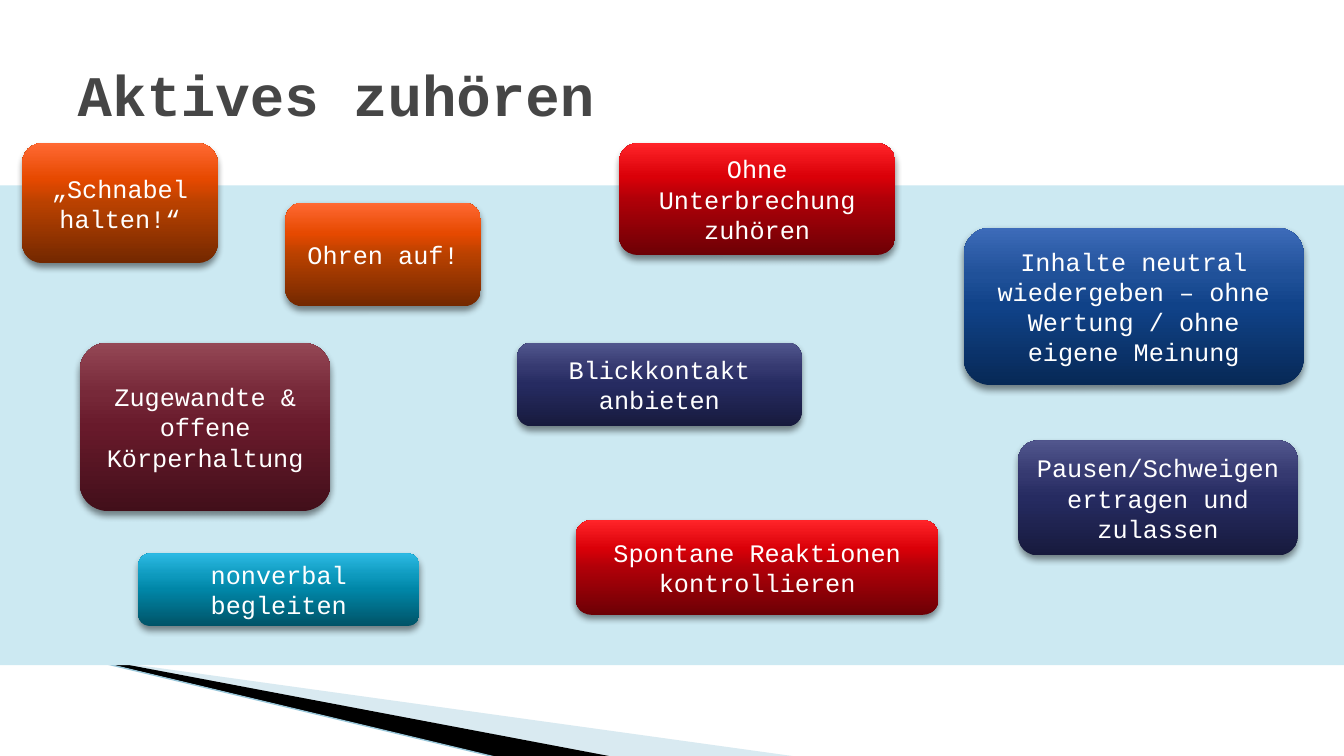
"""Builds the slide "Aktives zuhören" with its cloud of listening rules."""
from copy import deepcopy

from lxml import etree
from pptx import Presentation
from pptx.dml.color import RGBColor
from pptx.enum.shapes import MSO_CONNECTOR, MSO_SHAPE
from pptx.enum.text import MSO_ANCHOR, MSO_AUTO_SIZE, PP_ALIGN
from pptx.oxml.ns import qn
from pptx.util import Inches, Pt

RECTANGLE = MSO_SHAPE.RECTANGLE
ROUNDED = MSO_SHAPE.ROUNDED_RECTANGLE
STRAIGHT = MSO_CONNECTOR.STRAIGHT
MIDDLE = MSO_ANCHOR.MIDDLE
NO_AUTOFIT = MSO_AUTO_SIZE.NONE
LEFT, CENTER = PP_ALIGN.LEFT, PP_ALIGN.CENTER

WHITE = RGBColor(0xFF, 0xFF, 0xFF)
BLACK = RGBColor(0x00, 0x00, 0x00)
TITLE_GREY = RGBColor(0x46, 0x46, 0x46)
BAND_BLUE = RGBColor(0xCC, 0xE9, 0xF2)
WEDGE_BLUE = RGBColor(0xA0, 0xCB, 0xDC)
EDGE_BLUE = RGBColor(0x97, 0xC5, 0xD8)
ORANGE = [RGBColor(0x73, 0x28, 0x00), RGBColor(0xB9, 0x41, 0x00),
          RGBColor(0xE6, 0x49, 0x00), RGBColor(0xFF, 0x69, 0x33)]
WINE = [RGBColor(0x42, 0x0F, 0x1A), RGBColor(0x68, 0x1A, 0x2B),
        RGBColor(0x77, 0x29, 0x39), RGBColor(0x94, 0x47, 0x55)]
INDIGO = [RGBColor(0x17, 0x1A, 0x3D), RGBColor(0x26, 0x2B, 0x61),
          RGBColor(0x35, 0x39, 0x70), RGBColor(0x51, 0x56, 0x8D)]
TEAL = [RGBColor(0x00, 0x53, 0x67), RGBColor(0x00, 0x86, 0xA7),
        RGBColor(0x0E, 0x9A, 0xBE), RGBColor(0x2C, 0xB9, 0xE3)]
RED = [RGBColor(0x6D, 0x00, 0x05), RGBColor(0xB0, 0x00, 0x08),
       RGBColor(0xDA, 0x00, 0x08), RGBColor(0xFF, 0x24, 0x29)]
BLUE = [RGBColor(0x07, 0x29, 0x56), RGBColor(0x10, 0x42, 0x88),
        RGBColor(0x20, 0x51, 0x99), RGBColor(0x3D, 0x6B, 0xB9)]
STOP_POSITIONS = [0, 0.5, 0.7, 1]


def write_text(frame, text, size=18, color=WHITE, bold=False, align=CENTER):
    frame.word_wrap = True
    frame.auto_size = NO_AUTOFIT
    frame.vertical_anchor = MIDDLE
    paragraph = frame.paragraphs[0]
    paragraph.alignment = align
    run = paragraph.add_run()
    run.text = text
    run.font.name = "Courier New"
    run.font.size = Pt(size)
    run.font.bold = bold
    run.font.color.rgb = color


presentation = Presentation()
presentation.slide_width = Inches(13.33)
presentation.slide_height = Inches(7.5)
slide = presentation.slides.add_slide(presentation.slide_layouts[5])
shapes = slide.shapes

wedges = [
    ([(0.73, 6.51), (7.93, 7.51), (6.08, 7.51), (0.73, 6.5)], WEDGE_BLUE, 40),
    ([(0.71, 6.49), (6.09, 7.51), (4.96, 7.52), (0.72, 6.5)], BLACK, 100),
]
for corners, color, opacity in wedges:
    points = [(Inches(x), Inches(y)) for x, y in corners]
    builder = shapes.build_freeform(*points[0])
    builder.add_line_segments(points[1:], close=True)
    wedge = builder.convert_to_shape()
    wedge.shadow.inherit = False
    wedge.fill.solid()
    wedge.fill.fore_color.rgb = color
    wedge.line.fill.background()
    rgb = wedge.element.spPr.find(qn("a:solidFill"))[0]
    etree.SubElement(rgb, qn("a:alpha"), val=str(opacity * 1000))

edge = shapes.add_connector(
    STRAIGHT, Inches(-0.01), Inches(6.33), Inches(4.95), Inches(7.52))
edge.line.color.rgb = EDGE_BLUE
edge.line.width = Pt(0.95)
etree.SubElement(edge.element.spPr, qn("a:effectLst"))

band = shapes.add_shape(
    RECTANGLE, 0, Inches(1.84), presentation.slide_width, Inches(4.76))
band.shadow.inherit = False
band.fill.solid()
band.fill.fore_color.rgb = BAND_BLUE
band.line.fill.background()

title = shapes.title
title.left, title.top = Inches(0.67), Inches(0.3)
title.width, title.height = Inches(12), Inches(1.25)
write_text(title.text_frame, "Aktives zuhören",
           size=41, color=TITLE_GREY, bold=True, align=LEFT)

rules = [
    ("„Schnabel halten!“", ORANGE, 0.22, 1.42, 1.94, 1.19),
    ("Ohren auf!", ORANGE, 2.83, 2.01, 1.94, 1.03),
    ("Zugewandte & offene Körperhaltung", WINE, 0.79, 3.4, 2.49, 1.67),
    ("Blickkontakt anbieten", INDIGO, 5.13, 3.4, 2.82, 0.83),
    ("nonverbal begleiten", TEAL, 1.37, 5.49, 2.79, 0.72),
    ("Ohne Unterbrechung zuhören", RED, 6.14, 1.42, 2.74, 1.11),
    ("Spontane Reaktionen kontrollieren", RED, 5.71, 5.16, 3.6, 0.94),
    ("Inhalte neutral wiedergeben – ohne Wertung / ohne eigene Meinung",
     BLUE, 9.56, 2.26, 3.37, 1.56),
    ("Pausen/Schweigen ertragen und zulassen",
     INDIGO, 10.1, 4.37, 2.77, 1.14),
]
for text, shades, *place in rules:
    rule = shapes.add_shape(ROUNDED, *map(Inches, place))
    rule.line.fill.background()
    rule.fill.gradient()
    rule.fill.gradient_angle = 90
    properties = rule.element.spPr
    stop_list = properties.find(qn("a:gradFill")).find(qn("a:gsLst"))
    while len(stop_list) < len(shades):
        stop_list.append(deepcopy(stop_list[0]))
    for stop, position, shade in zip(
            rule.fill.gradient_stops, STOP_POSITIONS, shades):
        stop.position = position
        stop.color.rgb = shade

    rule.shadow.inherit = False
    shadow = etree.SubElement(
        properties.find(qn("a:effectLst")), qn("a:outerShdw"),
        blurRad=str(Pt(5)), dist=str(Pt(3)), dir="5400000", rotWithShape="0")
    shadow_color = etree.SubElement(shadow, qn("a:srgbClr"), val=str(BLACK))
    etree.SubElement(shadow_color, qn("a:alpha"), val="45000")
    write_text(rule.text_frame, text)

presentation.save("out.pptx")
